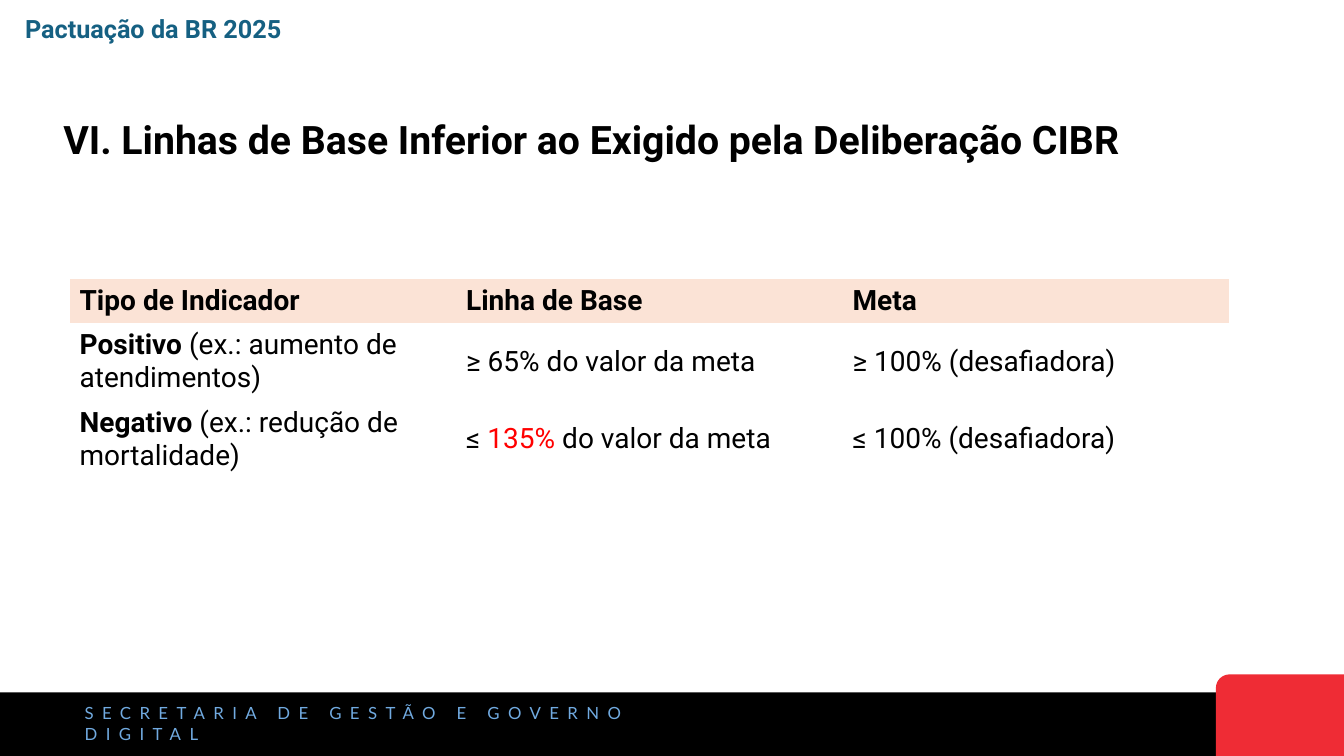
from pptx import Presentation
from pptx.dml.color import RGBColor
from pptx.enum.shapes import MSO_SHAPE
from pptx.enum.text import MSO_ANCHOR, MSO_AUTO_SIZE
from pptx.oxml.ns import qn
from pptx.util import Inches, Pt

RECTANGLE = MSO_SHAPE.RECTANGLE
ONE_ROUND_CORNER = MSO_SHAPE.ROUND_1_RECTANGLE
MIDDLE, TOP = MSO_ANCHOR.MIDDLE, MSO_ANCHOR.TOP
GROW = MSO_AUTO_SIZE.SHAPE_TO_FIT_TEXT
PLAIN_TABLE_STYLE = "{2D5ABB26-0587-4C30-8999-92F81FD0307C}"

THEME = {
    "black": "000000", "red": "EF2C35", "highlight": "FF0000",
    "footer": "71AAE0", "section": "156082", "header": "FBE3D6",
    "body_font": "Roboto", "footer_font": "Lato",
    "title_size": 28, "table_size": 20, "section_size": 18, "footer_size": 12,
}
WIDTH, HEIGHT = 13.33, 7.5


def write_runs(paragraph, segments, size, font="body_font"):
    """Add (text, bold, colour) segments as runs, with names looked up in THEME."""
    for text, bold, colour in segments:
        run = paragraph.add_run()
        run.text = text
        run.font.name = THEME[font]
        run.font.size = Pt(THEME[size])
        run.font.bold = bold
        run.font.color.rgb = RGBColor.from_string(THEME[colour])


presentation = Presentation()
presentation.slide_width, presentation.slide_height = Inches(WIDTH), Inches(HEIGHT)
slide = presentation.slides.add_slide(presentation.slide_layouts[6])

# Footer band and its corner block, both resting on the bottom edge
footer_shapes = [
    (RECTANGLE, 0, WIDTH, 0.63, "black"),
    (ONE_ROUND_CORNER, 12.06, WIDTH - 12.06, 0.81, "red"),
]
for preset, left, width, height, colour in footer_shapes:
    shape = slide.shapes.add_shape(
        preset, Inches(left), Inches(HEIGHT - height), Inches(width), Inches(height))
    shape.shadow.inherit = False
    shape.fill.solid()
    shape.fill.fore_color.rgb = RGBColor.from_string(THEME[colour])
    shape.line.fill.background()
    if preset == ONE_ROUND_CORNER:
        shape._element.spPr.find(qn("a:xfrm")).set("flipH", "1")

# Text boxes: position, anchor, text, bold, colour, size, font
texts = [
    ((0.78, 7.02, 6.56, 0.31), MIDDLE, "SECRETARIA DE GESTÃO E GOVERNO DIGITAL",
     False, "footer", "footer_size", "footer_font"),
    ((0.53, 1.01, 12.8, 0.8), MIDDLE,
     "VI. Linhas de Base Inferior ao Exigido pela Deliberação CIBR",
     True, "black", "title_size", "body_font"),
    ((0.15, 0.08, 6.67, 0.4), TOP, "Pactuação da BR 2025",
     True, "section", "section_size", "body_font"),
]
for position, anchor, text, bold, colour, size, font in texts:
    box = slide.shapes.add_textbox(*map(Inches, position))
    frame = box.text_frame
    frame.word_wrap = True
    frame.vertical_anchor = anchor
    paragraph = frame.paragraphs[0]
    write_runs(paragraph, [(text, bold, colour)], size, font)
    if size == "title_size":
        paragraph.line_spacing = 0.9
    else:
        frame.auto_size = GROW
    if size == "footer_size":
        frame.margin_left = frame.margin_right = Inches(0.06)
        frame.margin_top = frame.margin_bottom = Inches(0.06)
        paragraph.runs[0].font._element.set("spc", "600")

# Indicator table
rows = [
    [[(heading, True, "black")] for heading in ("Tipo de Indicador", "Linha de Base", "Meta")],
    [
        [("Positivo", True, "black"), (" (ex.: aumento de atendimentos)", False, "black")],
        [("≥ 65% do valor da meta", False, "black")],
        [("≥ 100% (desafiadora)", False, "black")],
    ],
    [
        [("Negativo", True, "black"), (" (ex.: redução de mortalidade)", False, "black")],
        [("≤ ", False, "black"), ("135%", False, "highlight"),
         (" do valor da meta", False, "black")],
        [("≤ 100% (desafiadora)", False, "black")],
    ],
]
row_heights = [0.43, 0.77, 0.77]
table = slide.shapes.add_table(
    len(rows), len(rows[0]), Inches(0.69), Inches(2.77),
    Inches(11.5), Inches(sum(row_heights))).table
table.horz_banding = False
table._tbl.tblPr.find(qn("a:tableStyleId")).text = PLAIN_TABLE_STYLE

for row_index, row in enumerate(rows):
    table.rows[row_index].height = Inches(row_heights[row_index])
    for column_index, segments in enumerate(row):
        cell = table.cell(row_index, column_index)
        cell.vertical_anchor = MIDDLE
        if row_index == 0:
            cell.fill.solid()
            cell.fill.fore_color.rgb = RGBColor.from_string(THEME["header"])
        else:
            cell.fill.background()
        write_runs(cell.text_frame.paragraphs[0], segments, "table_size")

presentation.save("out.pptx")
